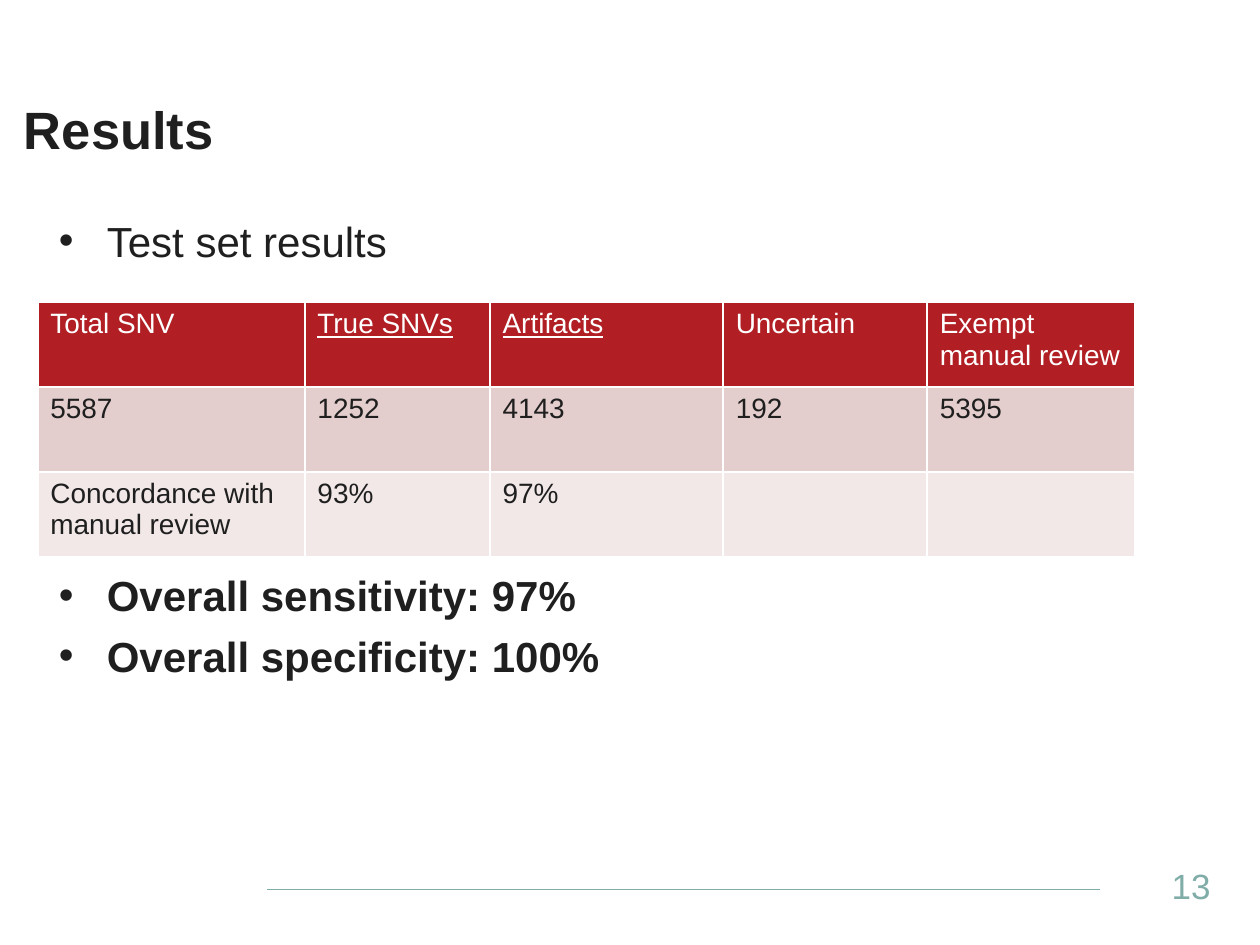
from lxml import etree
from pptx import Presentation
from pptx.dml.color import RGBColor
from pptx.enum.shapes import MSO_CONNECTOR
from pptx.enum.text import MSO_ANCHOR, PP_ALIGN
from pptx.oxml.ns import qn
from pptx.util import Inches, Pt

STRAIGHT = MSO_CONNECTOR.STRAIGHT
TOP, MIDDLE = MSO_ANCHOR.TOP, MSO_ANCHOR.MIDDLE
LEFT = PP_ALIGN.LEFT
DARK, TEAL, WHITE, RED = "1F1F1F", "81ADA8", "FFFFFF", "B11F24"


def rgb(value):
    return RGBColor.from_string(value)


def write(paragraph, text, size, color=DARK, bold=False, underline=False):
    paragraph.text = text
    paragraph.alignment = LEFT
    font = paragraph.font if not text else paragraph.runs[0].font
    font.name = "Arial"
    font.size = Pt(size)
    font.bold = bold
    font.underline = underline
    font.color.rgb = rgb(color)


presentation = Presentation()
presentation.slide_width = Inches(10)
presentation.slide_height = Inches(7.5)
slide = presentation.slides.add_slide(presentation.slide_layouts[5])

# Footer line
line = slide.shapes.add_connector(
    STRAIGHT, Inches(2.12), Inches(7.06), Inches(8.73), Inches(7.06))
line.line.color.rgb = rgb(TEAL)
line.line.width = Pt(0.5)
etree.SubElement(line.element.spPr, qn("a:effectLst"))

# Title
title = slide.shapes.title
title.left, title.top = Inches(0.09), Inches(0.72)
title.width, title.height = Inches(7.93), Inches(0.82)
title.text_frame.vertical_anchor = TOP
write(title.text_frame.paragraphs[0], "Results", 30, bold=True)

# Slide number
number = slide.shapes.add_textbox(
    Inches(9.2), Inches(6.83), Inches(0.8), Inches(0.4))
number.text_frame.word_wrap = True
number.text_frame.vertical_anchor = MIDDLE
write(number.text_frame.paragraphs[0], "13", 20, TEAL)

# Bullets: the second one starts below the table
body = slide.shapes.add_textbox(
    Inches(0.37), Inches(1.66), Inches(9.33), Inches(5.17))
body.text_frame.word_wrap = True
bullets = [
    ("Test set results", False, 0),
    ("Overall sensitivity: 97%", True, 173.5),
    ("Overall specificity: 100%", True, 6),
]
for index, (text, bold, space) in enumerate(bullets):
    frame = body.text_frame
    paragraph = frame.add_paragraph() if index else frame.paragraphs[0]
    properties = paragraph._p.get_or_add_pPr()
    properties.set("marL", str(Inches(0.38)))
    properties.set("indent", str(-Inches(0.38)))
    etree.SubElement(properties, qn("a:buFont"), typeface="Arial")
    etree.SubElement(properties, qn("a:buChar"), char="•")
    if space:
        paragraph.space_before = Pt(space)
    write(paragraph, text, 24, bold=bold)

# Results table
rows = [
    ["Total SNV", "True SNVs", "Artifacts", "Uncertain", "Exempt manual review"],
    ["5587", "1252", "4143", "192", "5395"],
    ["Concordance with manual review", "93%", "97%", "", ""],
]
row_fills = [RED, "E4CDCD", "F2E8E8"]
column_widths = [2.12, 1.47, 1.85, 1.62, 1.65]
underlined = ("True SNVs", "Artifacts")
table = slide.shapes.add_table(
    len(rows), len(column_widths),
    Inches(0.3), Inches(2.4), Inches(8.71), Inches(2.02)).table
for column, width in zip(table.columns, column_widths):
    column.width = Inches(width)
for row_index, (row, fill) in enumerate(zip(rows, row_fills)):
    for column_index, text in enumerate(row):
        cell = table.cell(row_index, column_index)
        write(cell.text_frame.paragraphs[0], text, 16,
              WHITE if fill == RED else DARK, underline=text in underlined)
        cell_properties = cell._tc.get_or_add_tcPr()
        for side in ("lnL", "lnR", "lnT", "lnB"):
            border = etree.SubElement(
                cell_properties, qn(f"a:{side}"), w=str(Pt(1)))
            border_fill = etree.SubElement(border, qn("a:solidFill"))
            etree.SubElement(border_fill, qn("a:srgbClr"), val=WHITE)
        cell.fill.solid()
        cell.fill.fore_color.rgb = rgb(fill)

presentation.save("out.pptx")
